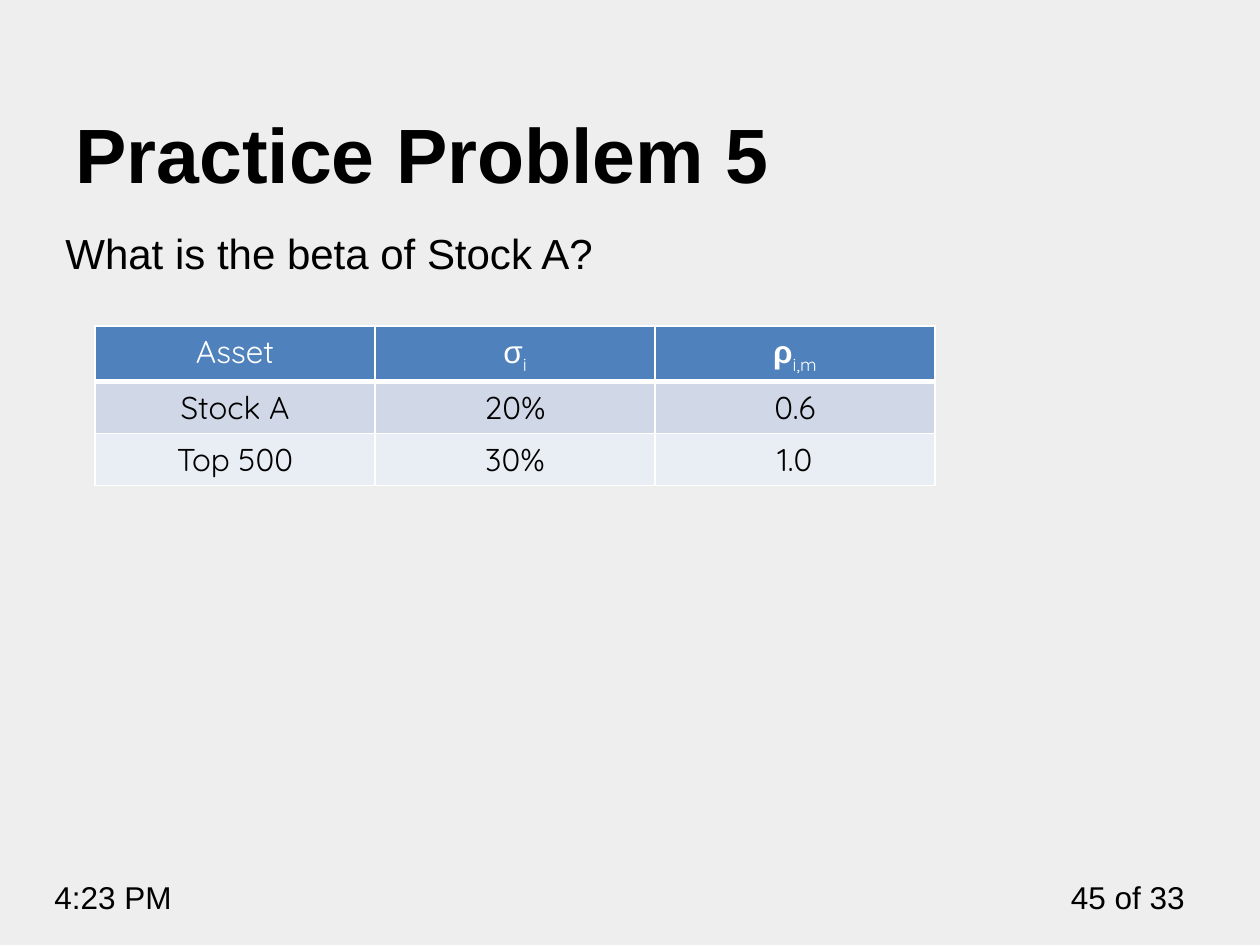
from dataclasses import dataclass

from lxml.etree import SubElement
from pptx import Presentation
from pptx.dml.color import RGBColor as Color
from pptx.enum.text import MSO_ANCHOR as Anchor, PP_ALIGN as Align
from pptx.oxml.ns import qn
from pptx.util import Emu, Pt

PX_PER_INCH = 126


@dataclass(frozen=True)
class Theme:
    background: str = "EEEEEE"
    ink: str = "000000"
    white: str = "FFFFFF"
    row_fills: tuple[str, ...] = ("4F81BD", "D0D8E8", "E9EDF4")
    font: str = "Arial"
    table_font: str = "Quicksand"
    title_size: int = 44
    body_size: int = 24
    small_size: int = 18


@dataclass(frozen=True)
class Span:
    text: str
    font: str
    bold: bool = False
    subscript: bool = False


@dataclass(frozen=True)
class Label:
    text: str
    left: int
    top: int
    width: int
    height: int
    size: int
    bold: bool = False
    align: Align = Align.LEFT
    anchor: Anchor = Anchor.TOP


THEME = Theme()


def px(length: int) -> Emu:
    return Emu(round(length * 914400 / PX_PER_INCH))


def write(frame, spans: list[Span], *, size: int, color: str,
          align: Align = Align.LEFT) -> None:
    para = frame.paragraphs[0]
    para.alignment = align
    for span in spans:
        run = para.add_run()
        run.text = span.text
        font = run.font
        font.name, font.size, font.bold = span.font, Pt(size), span.bold
        font.color.rgb = Color.from_string(color)
        if span.subscript:
            font._element.set("baseline", "-25000")


def add_label(page, label: Label) -> None:
    box = page.shapes.add_textbox(px(label.left), px(label.top),
                                  px(label.width), px(label.height))
    frame = box.text_frame
    frame.word_wrap = True
    frame.vertical_anchor = label.anchor
    write(frame, [Span(label.text, THEME.font, label.bold)],
          size=label.size, color=THEME.ink, align=label.align)


def set_borders(cell, bottom: int = 1) -> None:
    """Draw white borders; call before the fill is set."""
    properties = cell._tc.get_or_add_tcPr()
    for side, width in (("L", 1), ("R", 1), ("T", 1), ("B", bottom)):
        line = SubElement(properties, qn(f"a:ln{side}"), w=str(Pt(width)))
        fill = SubElement(line, qn("a:solidFill"))
        SubElement(fill, qn("a:srgbClr"), val=THEME.white)


def add_asset_table(page, rows: list[list[list[Span]]], *, left: int, top: int,
                    column_width: int, row_height: int) -> None:
    columns = len(rows[0])
    table = page.shapes.add_table(
        len(rows), columns, px(left), px(top),
        px(column_width * columns), px(row_height * len(rows))).table
    table.horz_banding = False
    for row_index, row in enumerate(rows):
        header = row_index == 0
        for column_index, spans in enumerate(row):
            cell = table.cell(row_index, column_index)
            set_borders(cell, bottom=3 if header else 1)
            cell.fill.solid()
            cell.fill.fore_color.rgb = Color.from_string(THEME.row_fills[row_index])
            write(cell.text_frame, spans, size=THEME.small_size,
                  color=THEME.white if header else THEME.ink, align=Align.CENTER)


def plain(text: str) -> list[Span]:
    return [Span(text, THEME.table_font)]


def symbol(letter: str, index: str, bold: bool = False) -> list[Span]:
    return [Span(letter, THEME.font, bold),
            Span(index, THEME.table_font, subscript=True)]


LABELS = [
    # Footer
    Label("45 of 33", 1050, 872, 147, 50, THEME.small_size, align=Align.RIGHT),
    Label("4:23 PM", 42, 872, 199, 50, THEME.small_size),
    # Question and title
    Label("What is the beta of Stock A?", 53, 221, 1155, 624, THEME.body_size),
    Label("Practice Problem 5", 63, 48, 1134, 157, THEME.title_size,
          bold=True, anchor=Anchor.BOTTOM),
]

ASSETS = [
    [plain("Asset"), symbol("σ", "i"), symbol("ρ", "i,m", bold=True)],
    [plain("Stock A"), plain("20%"), plain("0.6")],
    [plain("Top 500"), plain("30%"), plain("1.0")],
]


def main() -> None:
    deck = Presentation()
    deck.slide_width, deck.slide_height = px(1260), px(945)
    page = deck.slides.add_slide(deck.slide_layouts[6])
    page.background.fill.solid()
    page.background.fill.fore_color.rgb = Color.from_string(THEME.background)

    for label in LABELS:
        add_label(page, label)
    add_asset_table(page, ASSETS, left=95, top=326, column_width=280, row_height=52)
    deck.save("out.pptx")


if __name__ == "__main__":
    main()
